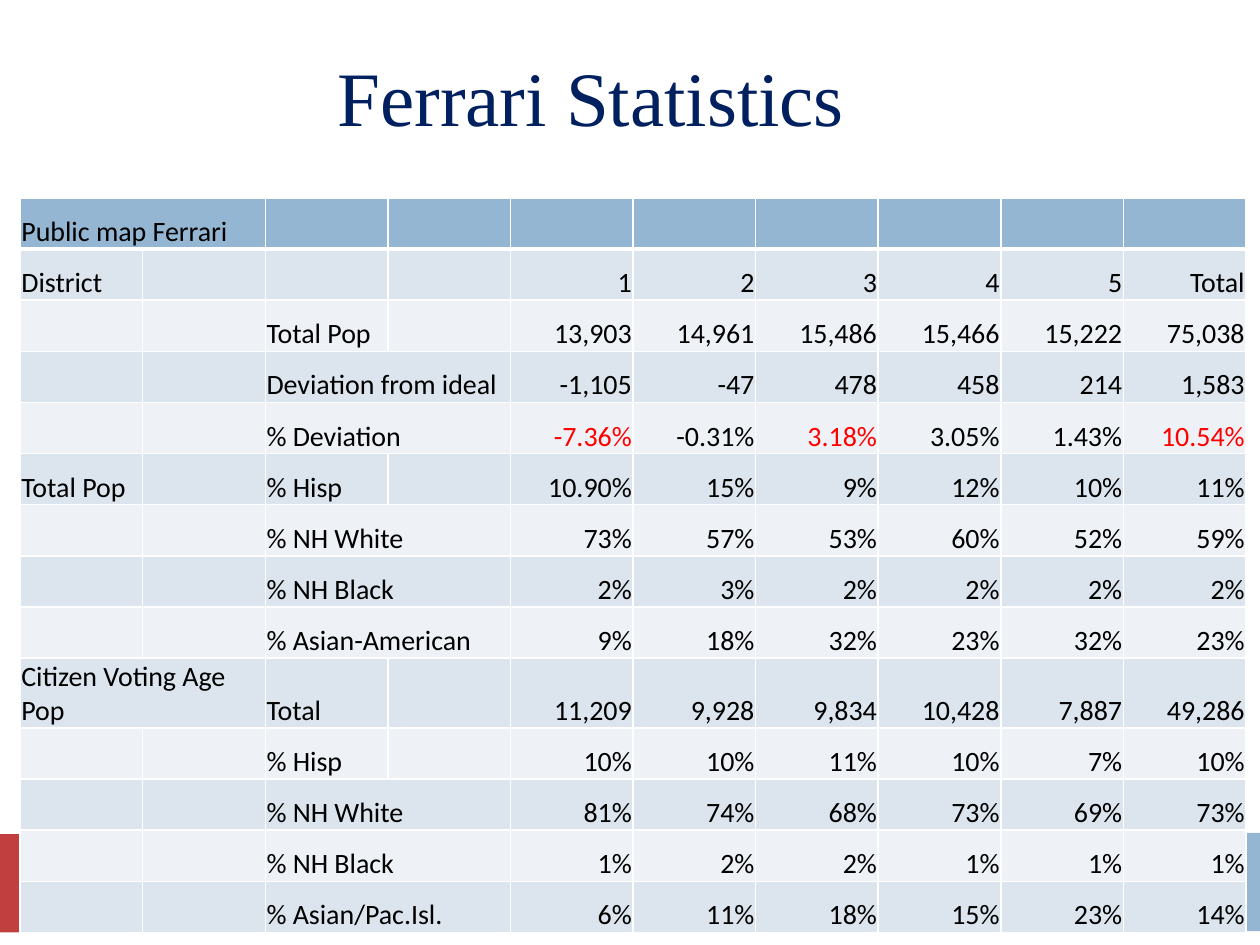
from lxml import etree
from pptx import Presentation
from pptx.dml.color import RGBColor
from pptx.enum.shapes import MSO_SHAPE
from pptx.enum.text import MSO_ANCHOR, PP_ALIGN
from pptx.oxml.ns import qn
from pptx.util import Inches, Pt

RECT = MSO_SHAPE.RECTANGLE
BOTTOM = MSO_ANCHOR.BOTTOM
LEFT, RIGHT = PP_ALIGN.LEFT, PP_ALIGN.RIGHT

TITLE = "Ferrari Statistics"
# group, measure, values by district and total
ROWS = [
    ("Public map Ferrari", "", []),
    ("District", "", ["1", "2", "3", "4", "5", "Total"]),
    ("", "Total Pop", ["13,903", "14,961", "15,486", "15,466", "15,222", "75,038"]),
    ("", "Deviation from ideal", ["-1,105", "-47", "478", "458", "214", "1,583"]),
    ("", "% Deviation", ["-7.36%", "-0.31%", "3.18%", "3.05%", "1.43%", "10.54%"]),
    ("Total Pop", "% Hisp", ["10.90%", "15%", "9%", "12%", "10%", "11%"]),
    ("", "% NH White", ["73%", "57%", "53%", "60%", "52%", "59%"]),
    ("", "% NH Black", ["2%", "3%", "2%", "2%", "2%", "2%"]),
    ("", "% Asian-American", ["9%", "18%", "32%", "23%", "32%", "23%"]),
    ("Citizen Voting Age Pop", "Total",
     ["11,209", "9,928", "9,834", "10,428", "7,887", "49,286"]),
    ("", "% Hisp", ["10%", "10%", "11%", "10%", "7%", "10%"]),
    ("", "% NH White", ["81%", "74%", "68%", "73%", "69%", "73%"]),
    ("", "% NH Black", ["1%", "2%", "2%", "1%", "1%", "1%"]),
    ("", "% Asian/Pac.Isl.", ["6%", "11%", "18%", "15%", "23%", "14%"]),
]
HIGHLIGHTED = {"-7.36%", "3.18%", "10.54%"}
BARS = [(-0.01, 6.62, 2.46, 0.78, "C13F3F"), (2.58, 6.61, 7.42, 0.78, "94B6D2")]
HEADER_FILL, BAND_FILLS = "94B6D2", ("EEF2F7", "DCE5EE")

TABLE_BOX = (0.16, 1.57, 9.73, 5.83)
COLUMNS, GROUP_COL, MEASURE_COL, VALUE_COL = 10, 0, 2, 4
TALL_ROW, TALL_HEIGHT = 9, 0.55
LABEL_CHARS = 9  # longer labels span two columns


def rgb(value):
    return RGBColor.from_string(value)


def style_run(r, font, size, color):
    r.font.name, r.font.size, r.font.bold = font, Pt(size), False
    r.font.color.rgb = rgb(color)


def set_borders(cell, top, bottom):
    """Draw white borders; top and bottom are widths in points."""
    tc_pr = cell._tc.get_or_add_tcPr()
    widths = {"a:lnL": 1, "a:lnR": 1, "a:lnT": top, "a:lnB": bottom}
    for i, (tag, width) in enumerate(widths.items()):
        ln = etree.Element(qn(tag), w=str(Pt(width)))
        fill = etree.SubElement(ln, qn("a:solidFill"))
        etree.SubElement(fill, qn("a:srgbClr"), val="FFFFFF")
        tc_pr.insert(i, ln)


def format_cell(cell, row):
    cell.vertical_anchor = BOTTOM
    cell.margin_left = cell.margin_right = cell.margin_top = Inches(0.01)
    cell.margin_bottom = 0
    cell.fill.solid()
    cell.fill.fore_color.rgb = rgb(BAND_FILLS[row % 2] if row else HEADER_FILL)
    set_borders(cell, 3 if row == 1 else 1, 1 if row else 3)


def write_cell(cell, text, align):
    p = cell.text_frame.paragraphs[0]
    p.text, p.alignment = text, align
    style_run(p.runs[0], "Calibri", 16, "FF0000" if text in HIGHLIGHTED else "000000")


def add_statistics(s):
    table = s.shapes.add_table(len(ROWS), COLUMNS, *map(Inches, TABLE_BOX)).table
    row_height = (TABLE_BOX[3] - TALL_HEIGHT) / (len(ROWS) - 1)
    for i, (group, measure, values) in enumerate(ROWS):
        table.rows[i].height = Inches(TALL_HEIGHT if i == TALL_ROW else row_height)
        for j in range(COLUMNS):
            format_cell(table.cell(i, j), i)
        for col, label in ((GROUP_COL, group), (MEASURE_COL, measure)):
            if len(label) > LABEL_CHARS:
                table.cell(i, col).merge(table.cell(i, col + 1))
            if label:
                write_cell(table.cell(i, col), label, LEFT)
        for j, value in enumerate(values, VALUE_COL):
            write_cell(table.cell(i, j), value, RIGHT)


def add_title(s):
    title = s.shapes.title
    title.left, title.top, title.width, title.height = map(Inches, (2.58, 0.15, 7.08, 1.03))
    tf = title.text_frame
    tf.text = TITLE
    tf.vertical_anchor = BOTTOM
    p = tf.paragraphs[0]
    p.alignment = LEFT
    style_run(p.runs[0], "Times New Roman", 44, "002060")


def add_bars(s):
    for *box, color in BARS:
        bar = s.shapes.add_shape(RECT, *map(Inches, box))
        bar.shadow.inherit = False
        bar.fill.solid()
        bar.fill.fore_color.rgb = rgb(color)
        bar.line.fill.background()


def main():
    prs = Presentation()
    prs.slide_width, prs.slide_height = Inches(10), Inches(7.5)
    s = prs.slides.add_slide(prs.slide_layouts[5])
    add_bars(s)
    add_title(s)
    add_statistics(s)
    prs.save("out.pptx")


if __name__ == "__main__":
    main()
